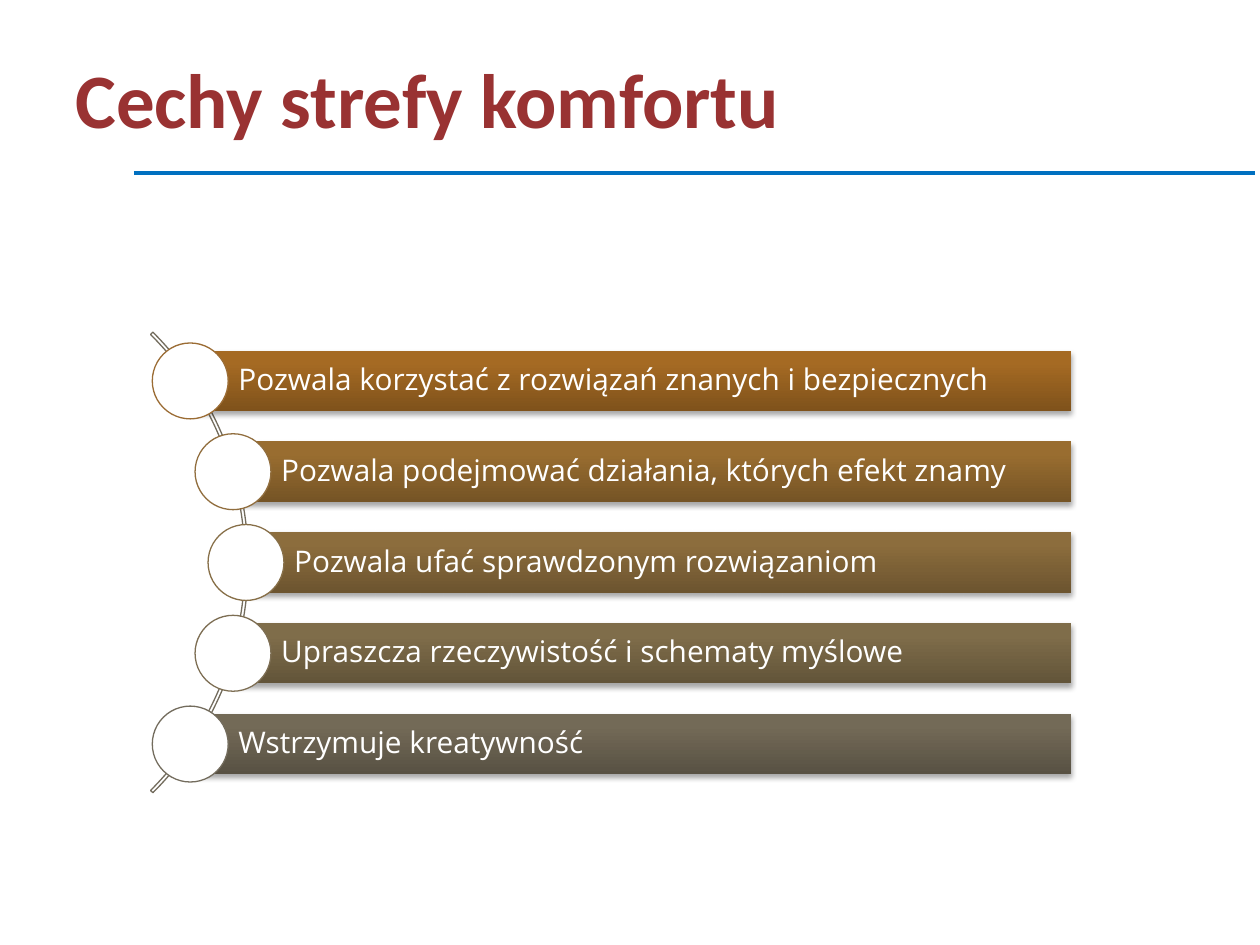
"""Build the slide on the traits of the comfort zone."""
from copy import deepcopy
from math import sqrt

from lxml.etree import SubElement
from pptx import Presentation
from pptx.dml.color import RGBColor as Rgb
from pptx.enum.shapes import MSO_CONNECTOR as Link, MSO_SHAPE as Kind
from pptx.enum.text import MSO_ANCHOR as Anchor, PP_ALIGN as Align
from pptx.oxml.ns import qn
from pptx.util import Cm, Pt

TITLE = "Cechy strefy komfortu"
TRAITS = [
    ("Pozwala korzystać z rozwiązań znanych i bezpiecznych",
     ("7F521B", "A56A23", "A86B21"), "9B6C34"),
    ("Pozwala podejmować działania, których efekt znamy",
     ("755425", "996D30", "9B6D2E"), "916E3E"),
    ("Pozwala ufać sprawdzonym rozwiązaniom",
     ("6C542F", "8C6D3D", "8E6E3C"), "876F48"),
    ("Upraszcza rzeczywistość i schematy myślowe",
     ("625439", "7F6D4A", "816D49"), "7D6E53"),
    ("Wstrzymuje kreatywność",
     ("585143", "736A57", "746A57"), "736C5D"),
]
STOPS = (0, 0.8, 1)

WHITE = Rgb(0xFF, 0xFF, 0xFF)
RED = Rgb(0x99, 0x32, 0x32)
BLUE = Rgb(0x00, 0x70, 0xC0)
GREY = Rgb(0x73, 0x6C, 0x5D)

MID_X, MID_Y, RADIUS = -1.56, 11.34, 6.52
ARC = 13.13
PITCH, BAR, DOT, RIGHT = 1.83, 1.22, 1.53, 21.6


def add_shape(slide, kind, x, y, w, h):
    shape = slide.shapes.add_shape(kind, Cm(x), Cm(y), Cm(w), Cm(h))
    shape.shadow.inherit = False
    return shape


def outline(shape, color):
    shape.line.color.rgb = color
    shape.line.width = Pt(0.75)


def write(shape, text, size, face, color, bold=False):
    frame = shape.text_frame
    frame.word_wrap = True
    frame.vertical_anchor = Anchor.MIDDLE
    para = frame.paragraphs[0]
    para.alignment = Align.LEFT
    run = para.add_run()
    run.text = text
    font = run.font
    font.size, font.name, font.bold = Pt(size), face, bold
    font.color.rgb = color
    return frame, para


def shade(shape, colors):
    fill = shape.fill
    fill.gradient()
    fill.gradient_angle = 90
    stops = shape._element.spPr.find(".//" + qn("a:gsLst"))
    stops.append(deepcopy(stops[0]))
    for stop, place, color in zip(fill.gradient_stops, STOPS, colors):
        stop.position = place
        stop.color.rgb = Rgb.from_string(color)


def drop(shape):
    root = shape._element.spPr.find(qn("a:effectLst"))
    glow = SubElement(root, qn("a:outerShdw"), blurRad=str(Pt(3.1)),
                      dist=str(Pt(1.8)), dir="5400000", rotWithShape="0")
    tint = SubElement(glow, qn("a:srgbClr"), val="000000")
    SubElement(tint, qn("a:alpha"), val="35000")


def add_head(slide):
    rule = slide.shapes.add_connector(
        Link.STRAIGHT, Cm(2.7), Cm(3.48), Cm(25.3), Cm(3.48))
    rule.line.color.rgb = BLUE
    rule.line.width = Pt(2.25)
    SubElement(rule._element.spPr, qn("a:effectLst"))
    box = slide.shapes.add_textbox(Cm(1.27), Cm(0.76), Cm(22.86), Cm(2.44))
    write(box, TITLE, 44, "Calibri", RED, True)


def add_arc(slide):
    arc = add_shape(slide, Kind.BLOCK_ARC, MID_X - ARC / 2,
                    MID_Y - ARC / 2, ARC, ARC)
    for i, value in enumerate((189, 27, 0.005)):
        arc.adjustments[i] = value
    arc.fill.background()
    outline(arc, GREY)


def add_trait(slide, step, text, colors, edge):
    rise = step * PITCH
    x, y = MID_X + sqrt(RADIUS ** 2 - rise ** 2), MID_Y + rise
    bar = add_shape(slide, Kind.RECTANGLE, x, y - BAR / 2, RIGHT - x, BAR)
    shade(bar, colors)
    bar.line.fill.background()
    drop(bar)
    frame, para = write(bar, text, 17, "Open Sans", WHITE)
    frame.margin_left = Cm(0.97)
    frame.margin_right = frame.margin_top = frame.margin_bottom = Cm(0.12)
    para.line_spacing = 0.9
    dot = add_shape(slide, Kind.OVAL, x - DOT / 2, y - DOT / 2, DOT, DOT)
    dot.fill.solid()
    dot.fill.fore_color.rgb = WHITE
    outline(dot, Rgb.from_string(edge))


def main():
    deck = Presentation()
    deck.slide_width, deck.slide_height = Cm(25.4), Cm(19.05)
    slide = deck.slides.add_slide(deck.slide_layouts[6])
    add_head(slide)
    add_arc(slide)
    for i, trait in enumerate(TRAITS):
        add_trait(slide, i - len(TRAITS) // 2, *trait)
    deck.save("out.pptx")


if __name__ == "__main__":
    main()
